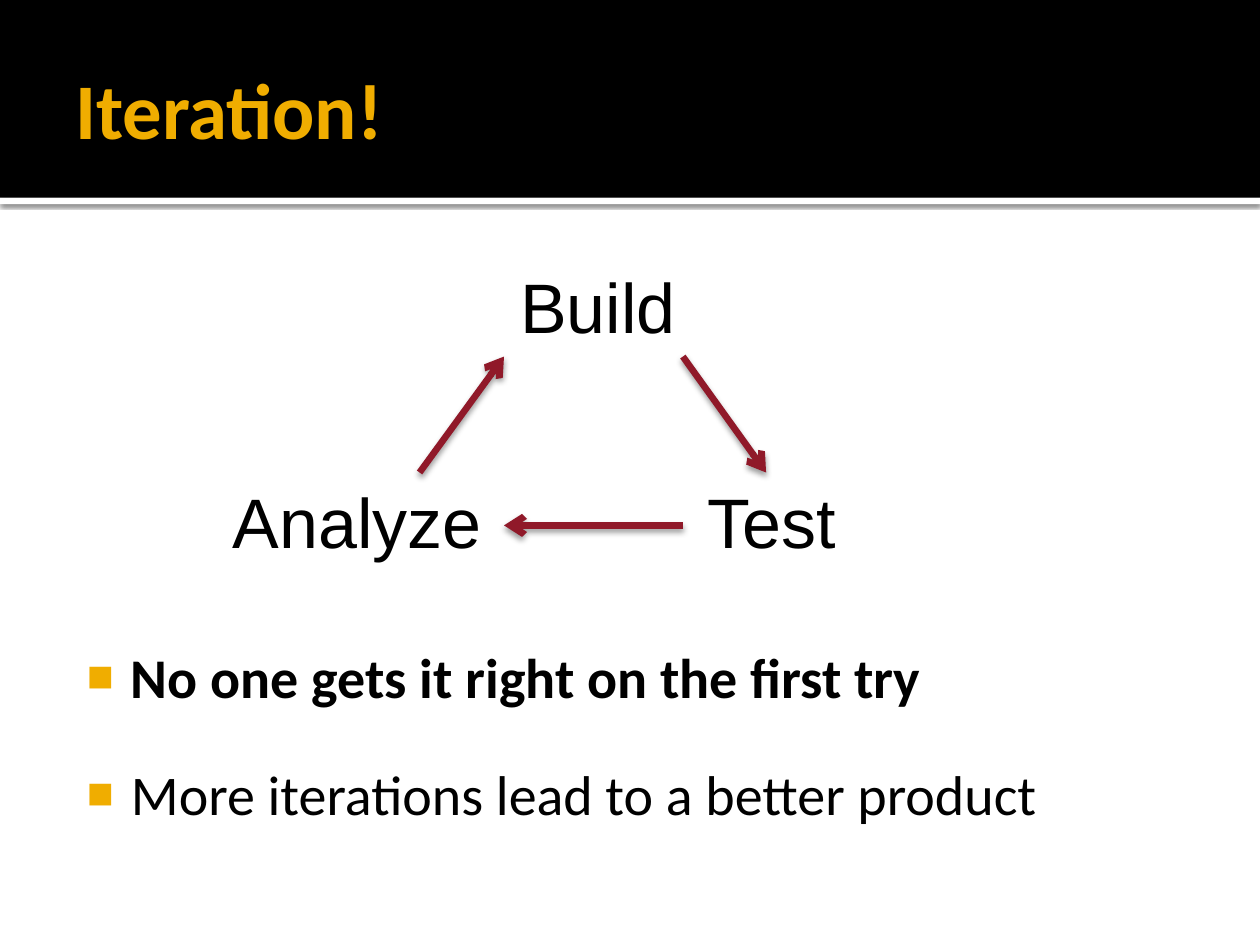
"""Build the "Iteration!" slide: a three-step cycle above two takeaways."""
from lxml.etree import SubElement
from pptx import Presentation
from pptx.dml.color import RGBColor
from pptx.enum.shapes import MSO_CONNECTOR as CONN, MSO_SHAPE as SHAPE
from pptx.enum.text import MSO_ANCHOR as ANCHOR, MSO_AUTO_SIZE as AUTO
from pptx.oxml.ns import qn
from pptx.util import Inches, Pt


def rgb(value):
    return RGBColor.from_string(value)


def add(parent, tag, **attrs):
    return SubElement(parent, qn(tag), {k: str(v) for k, v in attrs.items()})


class Deck:
    FONT, LABEL_FONT = "Calibri", "Arial"
    BLACK, WHITE, GOLD, RED = "000000", "FFFFFF", "F0AD00", "901929"

    def __init__(self, width, height):
        self.prs = Presentation()
        self.prs.slide_width, self.prs.slide_height = Inches(width), Inches(height)
        self.s = self.prs.slides.add_slide(self.prs.slide_layouts[6])

    def shadow(self, sp, blur, dist, alpha):
        effects = add(sp._element.spPr, "a:effectLst")
        outer = add(effects, "a:outerShdw", blurRad=Pt(blur), dist=Pt(dist),
                    dir=90 * 60000, rotWithShape=0)
        color = add(outer, "a:srgbClr", val=self.BLACK)
        add(color, "a:alpha", val=alpha * 1000)

    def band(self, top, height, color, shadow=None):
        sp = self.s.shapes.add_shape(SHAPE.RECTANGLE, 0, Inches(top),
                                     self.prs.slide_width, Inches(height))
        sp.fill.solid()
        sp.fill.fore_color.rgb = rgb(color)
        sp.line.fill.background()
        if shadow:
            self.shadow(sp, *shadow)
        else:
            sp.shadow.inherit = False

    def box(self, at, insets=(0.1, 0.05, 0.1, 0.05), wrap=True):
        tf = self.s.shapes.add_textbox(*map(Inches, at)).text_frame
        tf.margin_left, tf.margin_top, tf.margin_right, tf.margin_bottom = map(Inches, insets)
        tf.word_wrap = wrap
        return tf

    def style(self, p, size, color, font, bold=False):
        for r in p.runs:
            r.font.size, r.font.name, r.font.bold = Pt(size), font, bold
            r.font.color.rgb = rgb(color)

    def title(self, text, at):
        tf = self.box(at, (0.1, 0.05, 0.05, 0.05))
        tf.vertical_anchor = ANCHOR.MIDDLE
        tf.text = text
        self.style(tf.paragraphs[0], 45, self.GOLD, self.FONT, True)

    def label(self, text, at):
        tf = self.box(at, wrap=False)
        tf.auto_size = AUTO.SHAPE_TO_FIT_TEXT
        tf.text = text
        self.style(tf.paragraphs[0], 40, self.BLACK, self.LABEL_FONT)

    def bullets(self, items, at, gap):
        tf = self.box(at, (0.06, 0.1, 0.1, 0.05))
        for i, (text, bold) in enumerate(items):
            p = tf.add_paragraph() if i else tf.paragraphs[0]
            p.text = text
            pPr = p._p.get_or_add_pPr()
            pPr.set("marL", str(Inches(0.48)))
            pPr.set("indent", str(Inches(-0.35)))
            add(add(pPr, "a:buClr"), "a:srgbClr", val=self.GOLD)
            add(pPr, "a:buSzPct", val=80000)
            add(pPr, "a:buFont", typeface=self.LABEL_FONT)
            add(pPr, "a:buChar", char="■")
            if i:
                p.space_before = Pt(gap)
            self.style(p, 32, self.BLACK, self.FONT, bold)

    def arrow(self, start, end):
        cn = self.s.shapes.add_connector(CONN.STRAIGHT, *map(Inches, start + end))
        cn.line.color.rgb = rgb(self.RED)
        cn.line.width = Pt(3.78)
        add(cn.line._get_or_add_ln(), "a:tailEnd", type="arrow")
        self.shadow(cn, 3.5, 2, 38)


def main():
    deck = Deck(10, 7.5)
    deck.band(1.57, 0.05, deck.WHITE, shadow=(2.5, 0.8, 60))
    deck.band(0, 1.57, deck.BLACK)
    deck.title("Iteration!", (0.5, 0.17, 9, 1.37))
    deck.bullets([("No one gets it right on the first try", True),
                  ("More iterations lead to a better product", False)],
                 (0.5, 5, 9, 1.94), gap=28.5)
    for text, left, top, width in (("Build", 4.03, 2.04, 1.45),
                                   ("Test", 5.52, 3.75, 1.23),
                                   ("Analyze", 1.75, 3.75, 2.21)):
        deck.label(text, (left, top, width, 0.77))
    for start, end in (((5.42, 2.83), (6.08, 3.75)),
                       ((5.42, 4.17), (4, 4.17)),
                       ((3.33, 3.75), (4, 2.83))):
        deck.arrow(start, end)
    deck.prs.save("out.pptx")


if __name__ == "__main__":
    main()
